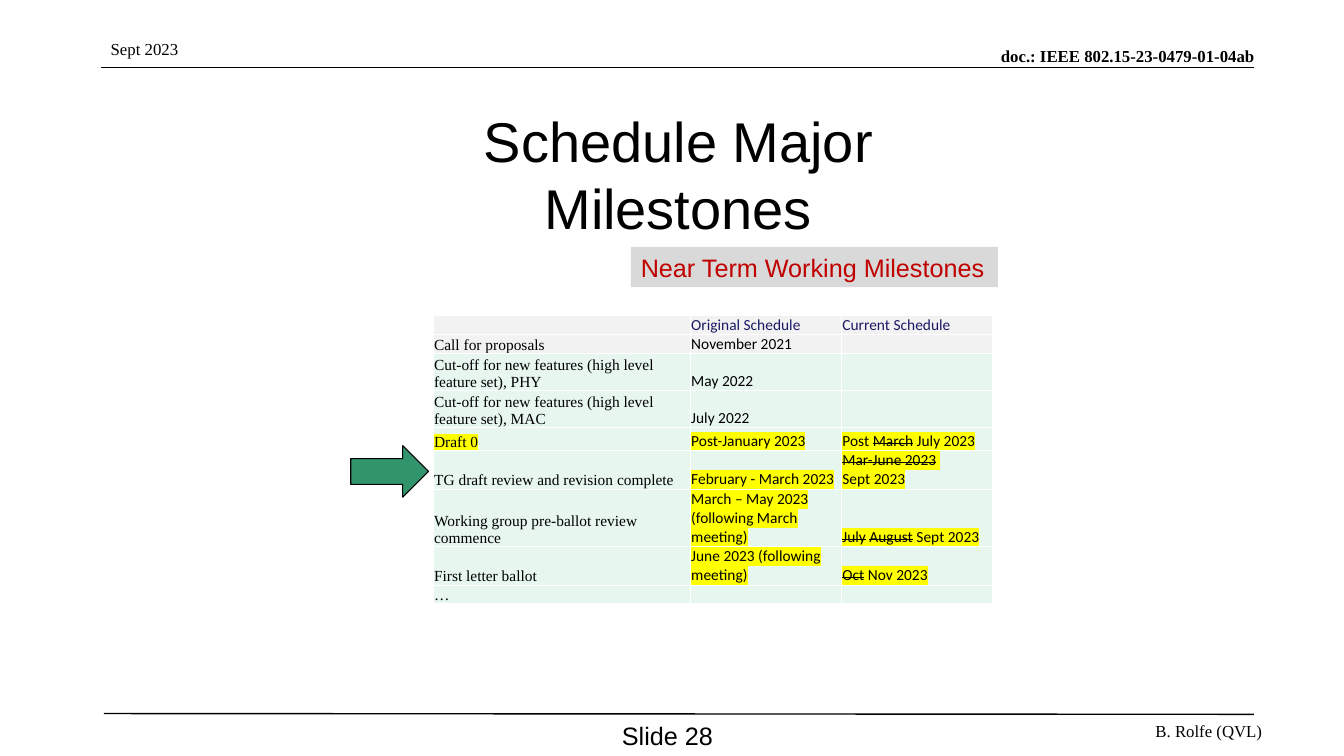
from lxml import etree
from pptx import Presentation
from pptx import util as u
from pptx.dml.color import RGBColor
from pptx.enum import shapes, text
from pptx.oxml.ns import qn

COLORS = {
    "black": "000000", "white": "FFFFFF", "navy": "191966", "red": "C00000",
    "gray": "D9D9D9", "pale gray": "F2F2F2", "pale green": "E7F6EF",
    "green": "32946A", "yellow": "FFFF00",
}
SERIF, SANS, TABLE_FONT = "Times New Roman", "Arial", "Calibri"
LEFT, CENTER, RIGHT = text.PP_ALIGN.LEFT, text.PP_ALIGN.CENTER, text.PP_ALIGN.RIGHT
TOP, MIDDLE, BOTTOM = text.MSO_ANCHOR.TOP, text.MSO_ANCHOR.MIDDLE, text.MSO_ANCHOR.BOTTOM


def rgb(name):
    return RGBColor.from_string(COLORS[name])


def add_color(parent, tag, name):
    """Append a child holding one colour, such as a:highlight."""
    child = etree.SubElement(parent, qn(tag))
    etree.SubElement(child, qn("a:srgbClr")).set("val", COLORS[name])


def write(frame, content, size=12, font=SERIF, color="black", bold=False,
          align=LEFT, highlight=None):
    """Fill a text frame; a newline starts a paragraph, ~tildes~ strike out."""
    for number, line in enumerate(content.split("\n")):
        paragraph = frame.add_paragraph() if number else frame.paragraphs[0]
        paragraph.alignment = align
        for index, piece in enumerate(line.split("~")):
            if not piece:
                continue
            run = paragraph.add_run()
            run.text = piece
            run.font.size, run.font.bold = u.Pt(size), bold
            run.font.color.rgb = rgb(color)
            properties = run.font._element
            if highlight:
                add_color(properties, "a:highlight", highlight)
            if index % 2:
                properties.set("strike", "sngStrike")
            run.font.name = font
        if not line:
            end = etree.SubElement(paragraph._p, qn("a:endParaRPr"))
            end.set("sz", str(size * 100))


class MilestoneSlide:
    def __init__(self, presentation):
        self.slide = presentation.slides.add_slide(presentation.slide_layouts[6])
        self.shapes = self.slide.shapes

    def label(self, content, left, top, width, height, anchor=TOP,
              inset=(0.25, 0.13), **style):
        box = self.shapes.add_textbox(*map(u.Cm, (left, top, width, height)))
        frame = box.text_frame
        frame.word_wrap, frame.vertical_anchor = True, anchor
        frame.margin_left = frame.margin_right = u.Cm(inset[0])
        frame.margin_top = frame.margin_bottom = u.Cm(inset[1])
        write(frame, content, **style)

    def rule(self, *ends):
        line = self.shapes.add_connector(shapes.MSO_CONNECTOR.STRAIGHT, *map(u.Cm, ends))
        line.line.color.rgb, line.line.width = rgb("black"), u.Pt(1)
        etree.SubElement(line._element.spPr, qn("a:effectLst"))

    def block(self, kind, left, top, width, height, fill, outline=None):
        shape = self.shapes.add_shape(kind, *map(u.Cm, (left, top, width, height)))
        shape.shadow.inherit = False
        shape.fill.solid()
        shape.fill.fore_color.rgb = rgb(fill)
        if outline:
            shape.line.color.rgb, shape.line.width = rgb(outline), u.Pt(0.75)
        else:
            shape.line.fill.background()
        return shape

    def cell(self, cell, content, fill, **style):
        cell.vertical_anchor = BOTTOM
        cell.margin_left = cell.margin_right = u.Cm(0.02)
        cell.margin_top = cell.margin_bottom = 0
        properties = cell._tc.get_or_add_tcPr()
        for side in "LRTB":
            border = etree.SubElement(properties, qn("a:ln" + side))
            border.set("w", str(u.Pt(1)))
            add_color(border, "a:solidFill", "white")
        cell.fill.solid()
        cell.fill.fore_color.rgb = rgb(fill)
        write(cell.text_frame, content, size=11, **style)

    def schedule(self, left, top, widths, heights, rows):
        frame = self.shapes.add_table(len(rows), len(widths), *map(
            u.Cm, (left, top, sum(widths), sum(heights))))
        table = frame.table
        table.first_row = table.horz_banding = False
        for column, width in zip(table.columns, widths):
            column.width = u.Cm(width)
        for r, (row, height) in enumerate(zip(rows, heights)):
            table.rows[r].height = u.Cm(height)
            for c, content in enumerate(row):
                current = 4 <= r <= 7 and (c > 0 or r == 4)
                self.cell(table.cell(r, c), content,
                          fill="pale gray" if r < 2 else "pale green",
                          font=TABLE_FONT if c else SERIF,
                          color="black" if r else "navy",
                          highlight="yellow" if current else None)


MILESTONES = [
    ("", "Original Schedule", "Current Schedule"),
    ("Call for proposals", "November 2021", ""),
    ("Cut-off for new features (high level feature set), PHY", "May 2022", ""),
    ("Cut-off for new features (high level feature set), MAC", "July 2022", ""),
    ("Draft 0", "Post-January 2023", "Post ~March~ July 2023"),
    ("TG draft review and revision complete", "February - March 2023",
     "~Mar-June 2023~ \nSept 2023"),
    ("Working group pre-ballot review commence",
     "March – May 2023 (following March meeting)", "~July~ ~August~ Sept 2023"),
    ("First letter ballot", "June 2023 (following meeting)", "~Oct~ Nov 2023"),
    ("…", "", ""),
]


def main():
    presentation = Presentation()
    presentation.slide_width, presentation.slide_height = u.Cm(33.87), u.Cm(19.05)
    page = MilestoneSlide(presentation)

    # Header and footer
    page.label("doc.: IEEE 802.15-23-0479-01-04ab", 16.94, 1.14, 14.68, 0.51,
               anchor=BOTTOM, inset=(0, 0), bold=True, align=RIGHT)
    page.rule(2.54, 1.7, 31.6, 1.7)
    page.rule(2.62, 17.98, 31.6, 18)
    page.label("Sept 2023", 2.54, 0.84, 6.5, 0.79)
    page.label("B. Rolfe (QVL)", 18.19, 18.02, 13.87, 0.79, align=RIGHT)
    page.label("Slide 28", 15.6, 18.21, 2.44, 0.66, anchor=MIDDLE, inset=(0, 0),
               size=18, font=SANS, align=CENTER)

    # Title
    page.label("Schedule Major Milestones", 9, 3.81, 16.18, 1.12, anchor=MIDDLE,
               size=40, font=SANS, align=CENTER)

    # Schedule table
    page.schedule(10.92, 7.95, (6.48, 3.81, 3.81),
                  (0.48, 0.48, 0.91, 0.91, 0.58, 0.97, 1.45, 0.97, 0.46), MILESTONES)

    # Table heading and marker of the current step
    heading = page.block(shapes.MSO_SHAPE.RECTANGLE, 15.9, 6.22, 9.25, 1.02, "gray")
    heading.text_frame.word_wrap = False
    write(heading.text_frame, "Near Term Working Milestones", size=18, font=SANS, color="red")
    page.block(shapes.MSO_SHAPE.RIGHT_ARROW, 8.84, 11.23, 1.96, 1.3, "green", outline="black")

    presentation.save("out.pptx")


if __name__ == "__main__":
    main()
